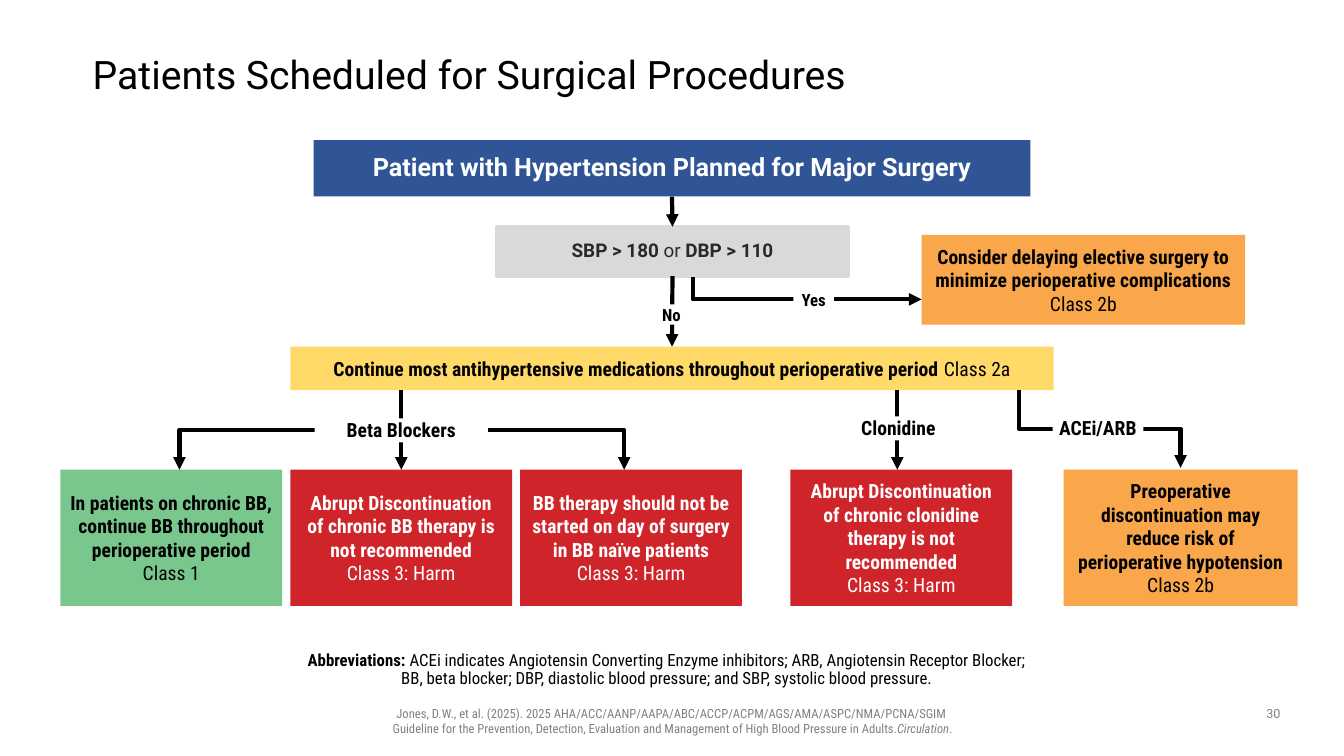
from lxml.etree import SubElement
from pptx import Presentation
from pptx.dml.color import RGBColor
from pptx.enum.shapes import MSO_CONNECTOR, MSO_SHAPE
from pptx.enum.text import MSO_ANCHOR, PP_ALIGN
from pptx.oxml.ns import qn
from pptx.util import Inches, Pt

COLORS = {
    "black": "000000", "white": "FFFFFF", "dark": "292929", "muted": "808080",
    "navy": "2F5597", "silver": "D9D9D9", "yellow": "FFDA68",
    "green": "79C78D", "red": "CF242A", "orange": "FAA74B",
}
CONDENSED, ROBOTO = "Roboto Condensed", "Roboto"
ZERO = (0, 0, 0, 0)
PADDED = (0.1, 0.05, 0.1, 0.05)
BOLD, ITALIC = {"bold": True}, {"italic": True}

# Colour, text colour, left, top, width, height, recommendation, class
RECOMMENDATIONS = [
    ("green", "black", 0.6, 4.66, 2.2, 1.35,
     "In patients on chronic BB, continue BB throughout perioperative period", "Class 1"),
    ("red", "white", 2.88, 4.66, 2.2, 1.35,
     "Abrupt Discontinuation of chronic BB therapy is not recommended", "Class 3: Harm"),
    ("red", "white", 5.16, 4.66, 2.2, 1.35,
     "BB therapy should not be started on day of surgery in BB naïve patients", "Class 3: Harm"),
    ("red", "white", 7.84, 4.66, 2.2, 1.35,
     "Abrupt Discontinuation of chronic clonidine therapy is not recommended", "Class 3: Harm"),
    ("orange", "black", 10.55, 4.66, 2.32, 1.35,
     "Preoperative discontinuation may reduce risk of perioperative hypotension", "Class 2b"),
    ("orange", "black", 9.14, 2.33, 3.21, 0.89,
     "Consider delaying elective surgery to minimize perioperative complications", "Class 2b"),
]
LABELS = [
    ("Yes", 12, 7.87, 2.87, 0.4, 0.2),
    ("No", 12, 6.46, 3.02, 0.4, 0.2),
    ("Beta Blockers", 14, 3.12, 4.15, 1.72, 0.24),
    ("Clonidine", 14, 8.05, 4.13, 1.72, 0.24),
    ("ACEi/ARB", 14, 10.44, 4.13, 0.9, 0.24),
]
# Start x, y, end x, y, preset
ELBOWS = [
    (6.87, 2.75, 9.14, 2.97, "bentConnector2"),
    (3.98, 3.87, 1.78, 4.66, "bentConnector3"),
    (3.98, 3.87, 6.19, 4.66, "bentConnector3"),
    (10.11, 3.87, 11.71, 4.64, "bentConnector3"),
]

prs = Presentation()
prs.slide_width, prs.slide_height = Inches(13.33), Inches(7.5)
s = prs.slides.add_slide(prs.slide_layouts[6])


def rgb(name):
    return RGBColor.from_string(COLORS[name])


def write(sp, paragraphs, size, color="black", font=CONDENSED, insets=ZERO,
          anchor=MSO_ANCHOR.MIDDLE, align=PP_ALIGN.CENTER, spacing=None):
    """Fill sp with paragraphs, each a list of (text, font values) runs."""
    tf = sp.text_frame
    tf.word_wrap, tf.vertical_anchor = True, anchor
    for side, inset in zip(("left", "top", "right", "bottom"), insets):
        setattr(tf, f"margin_{side}", Inches(inset))
    for i, runs in enumerate(paragraphs):
        p = tf.paragraphs[0] if i == 0 else tf.add_paragraph()
        p.alignment = align
        if spacing:
            p.line_spacing = spacing
        for text, values in runs:
            if text == "\n":
                p.add_line_break()
                continue
            r = p.add_run()
            r.text = text
            r.font.color.rgb = rgb(color)
            style = {"name": font, "size": Pt(size), "bold": False, **values}
            for key, value in style.items():
                setattr(r.font, key, value)


def add_box(fill, *place):
    sp = s.shapes.add_shape(MSO_SHAPE.RECTANGLE, *map(Inches, place))
    sp.shadow.inherit = False
    sp.fill.solid()
    sp.fill.fore_color.rgb = rgb(fill)
    sp.line.fill.background()
    return sp


def add_text(*place):
    return s.shapes.add_textbox(*map(Inches, place))


def add_arrow(kind, *ends):
    cx = s.shapes.add_connector(kind, *map(Inches, ends))
    cx.line.color.rgb = rgb("black")
    cx.line.width = Pt(3)
    SubElement(cx.line._get_or_add_ln(), qn("a:tailEnd"), type="triangle")
    SubElement(cx._element.spPr, qn("a:effectLst"))
    return cx


def add_elbow(x1, y1, x2, y2, preset):
    """Leave (x1, y1) downwards: a horizontal-first elbow turned a quarter."""
    mid_x, mid_y = (x1 + x2) / 2, (y1 + y2) / 2
    half_w, half_h = (y2 - y1) / 2, abs(x2 - x1) / 2
    cx = add_arrow(MSO_CONNECTOR.ELBOW, mid_x - half_w, mid_y - half_h,
                   mid_x + half_w, mid_y + half_h)
    spPr = cx._element.spPr
    spPr.find(qn("a:prstGeom")).set("prst", preset)
    xfrm = spPr.find(qn("a:xfrm"))
    if x2 < x1:
        xfrm.set("rot", "5400000")
    else:
        xfrm.set("rot", "16200000")
        xfrm.set("flipH", "1")


write(add_text(0.92, 0.4, 11.5, 0.72),
      [[("Patients Scheduled for Surgical Procedures", {})]],
      28, font=ROBOTO, align=PP_ALIGN.LEFT, spacing=0.9)

patient = add_box("navy", 3.11, 1.39, 7.11, 0.56)
write(patient, [[("Patient with Hypertension Planned for Major Surgery", BOLD)]],
      18, "white", ROBOTO, spacing=0.9)

pressure = add_box("silver", 4.92, 2.25, 3.5, 0.49)
pressure.line.color.rgb = rgb("silver")
pressure.line.width = Pt(2)
write(pressure, [[("SBP > 180 ", BOLD), ("or ", {}), ("DBP > 110", BOLD)]],
      13.5, "dark", ROBOTO, spacing=0.9)

medication = add_box("yellow", 2.88, 3.44, 7.57, 0.43)
write(medication,
      [[("Continue most antihypertensive medications throughout perioperative period ", BOLD),
        ("Class 2a", {})]], 14, insets=PADDED)

cards = []
for fill, color, *place, advice, grade in RECOMMENDATIONS:
    card = add_box(fill, *place)
    write(card, [[(advice, BOLD)], [(grade, {})]], 14, color, insets=PADDED)
    cards.append(card)

for upper, lower in ((patient, pressure), (pressure, medication)):
    cx = add_arrow(MSO_CONNECTOR.STRAIGHT, 6.67, 1.95, 6.67, 2.25)
    cx.begin_connect(upper, 2)
    cx.end_connect(lower, 0)
beta = add_arrow(MSO_CONNECTOR.STRAIGHT, 3.98, 3.87, 3.98, 4.66)
beta.end_connect(cards[1], 0)
add_arrow(MSO_CONNECTOR.STRAIGHT, 8.9, 3.87, 8.9, 4.66)
for elbow in ELBOWS:
    add_elbow(*elbow)

for text, size, *place in LABELS:
    write(add_box("white", *place), [[(text, BOLD)]], size, anchor=MSO_ANCHOR.TOP)

write(add_text(3.05, 6.42, 7.23, 0.46),
      [[("Abbreviations: ", BOLD),
        ("ACEi indicates Angiotensin Converting Enzyme inhibitors; ARB, Angiotensin "
         "Receptor Blocker; BB, beta blocker; DBP, diastolic blood pressure; and SBP, "
         "systolic blood pressure.", {})]],
      12, insets=(0, 0.05, 0.1, 0.05), anchor=MSO_ANCHOR.BOTTOM, spacing=0.9)

write(add_text(2.36, 6.95, 8.62, 0.4),
      [[("Jones, D.W., et al. (2025). 2025 AHA/ACC/AANP/AAPA/ABC/ACCP/ACPM/AGS/AMA/"
         "ASPC/NMA/PCNA/SGIM ", {}),
        ("\n", {}),
        ("Guideline for the Prevention, Detection, Evaluation and Management of "
         "High Blood Pressure in Adults.", {}),
        ("Circulation", ITALIC), (".", {})]],
      9, "muted", insets=PADDED, anchor=MSO_ANCHOR.TOP)
write(add_text(12.42, 6.95, 0.42, 0.26), [[("30", {})]],
      9, "muted", ROBOTO, PADDED, MSO_ANCHOR.TOP)

prs.save("out.pptx")
